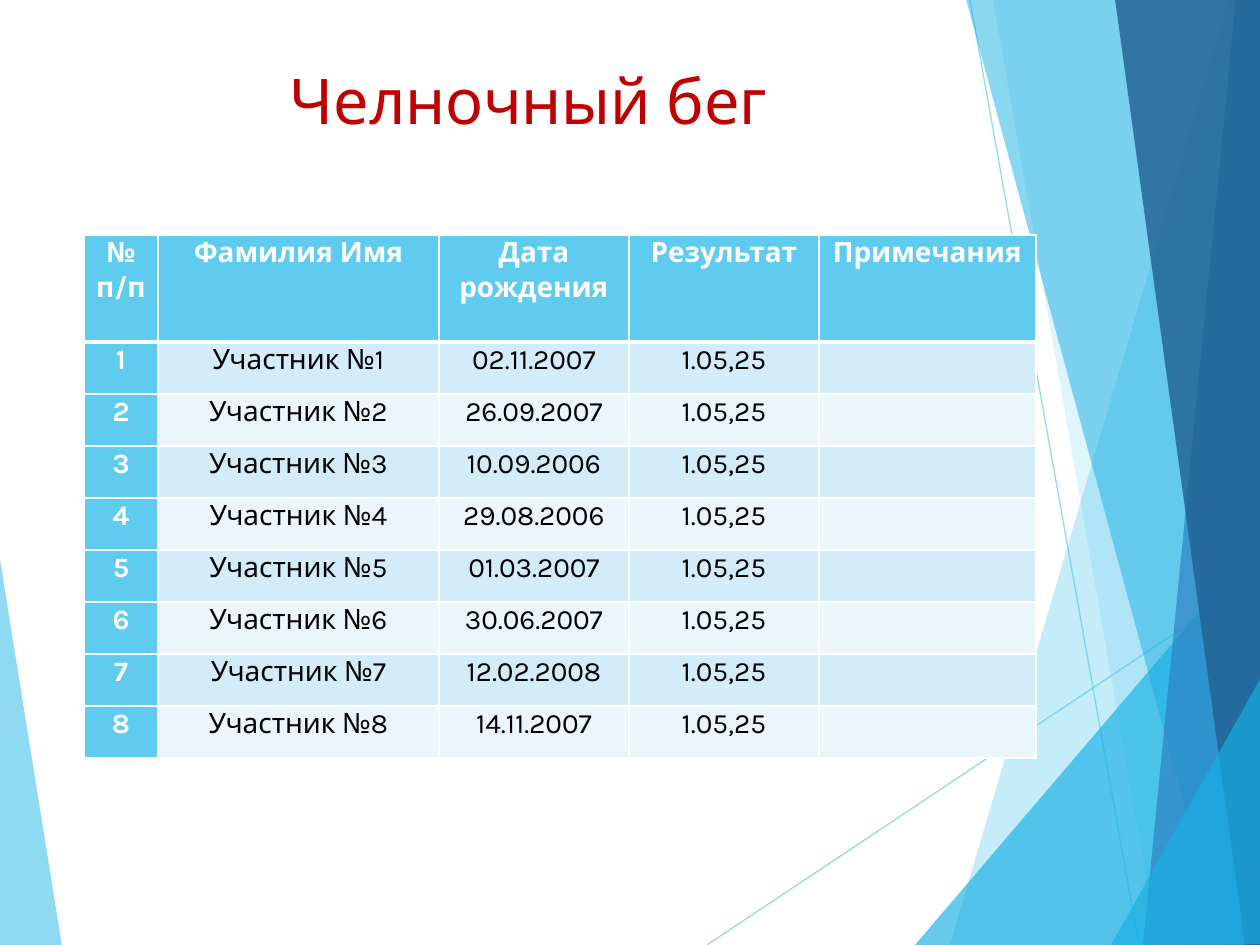
from lxml.etree import SubElement
from pptx import Presentation
from pptx.dml.color import RGBColor
from pptx.enum.shapes import MSO_CONNECTOR
from pptx.enum.text import MSO_ANCHOR, PP_ALIGN
from pptx.oxml.ns import qn
from pptx.util import Pt

PX = 7257  # EMU in one px, 126 px to the inch
FONT = "Karla"
SKY, CYAN, BLUE, NAVY = "5FCBEF", "17B0E4", "2E83C3", "226292"
WHITE, BLACK, RED = "FFFFFF", "000000", "C00000"
BANDS = ["D2ECF9", "EAF6FC"]


def paint(fill, color):
    fill.solid()
    fill.fore_color.rgb = RGBColor.from_string(color)


def write(frame, text, size=16, color=BLACK, bold=False, spacing=1.0, after=0):
    paragraph = frame.paragraphs[0]
    paragraph.alignment = PP_ALIGN.CENTER
    paragraph.line_spacing = spacing
    paragraph.space_after = Pt(after)
    run = paragraph.add_run()
    run.text = text
    run.font.name = FONT
    run.font.size = Pt(size)
    run.font.bold = bold
    paint(run.font.fill, color)


presentation = Presentation()
presentation.slide_width = 1260 * PX
presentation.slide_height = 945 * PX
slide = presentation.slides.add_slide(presentation.slide_layouts[6])

# Background facets, back to front: points, colour, opacity in percent.
# Two points make a thin line.
facets = [
    ([(-1, 553), (62, 946), (-1, 945)], SKY, 70),
    ([(707, 945), (1261, 576)], SKY, 70),
    ([(970, 0), (1139, 945)], SKY, 70),
    ([(1229, 0), (950, 945), (1263, 946), (1261, 1)], SKY, 36),
    ([(993, -1), (1158, 945), (1261, 945), (1261, -1)], SKY, 20),
    ([(915, 945), (1260, 541), (1261, 945)], CYAN, 66),
    ([(966, -1), (1222, 945), (1261, 944), (1261, -1)], CYAN, 50),
    ([(1236, -1), (1143, 945), (1261, 945), (1260, -1)], BLUE, 70),
    ([(1115, -1), (1245, 945), (1263, 945), (1260, -1)], NAVY, 82),
    ([(1111, 945), (1263, 674), (1263, 944)], CYAN, 66),
]
for points, color, opacity in facets:
    if len(points) == 2:
        ends = [value * PX for point in points for value in point]
        shape = slide.shapes.add_connector(MSO_CONNECTOR.STRAIGHT, *ends)
        shape.line.width = Pt(0.75)
        paint(shape.line.fill, color)
        SubElement(shape.element.spPr, qn("a:effectLst"))
    else:
        builder = slide.shapes.build_freeform(*points[0], scale=PX)
        builder.add_line_segments(points[1:], close=True)
        shape = builder.convert_to_shape()
        shape.shadow.inherit = False
        shape.line.fill.background()
        paint(shape.fill, color)
    for tint in shape.element.spPr.iter(qn("a:srgbClr")):
        SubElement(tint, qn("a:alpha"), val=str(opacity * 1000))

# Title
title = slide.shapes.add_textbox(84 * PX, 55 * PX, 874 * PX, 210 * PX)
title.text_frame.word_wrap = True
title.text_frame.vertical_anchor = MSO_ANCHOR.TOP
write(title.text_frame, " Челночный бег", size=36, color=RED)

# Results table
header = ["№ п/п", "Фамилия Имя", "Дата рождения", "Результат", "Примечания"]
birth_dates = ["02.11.2007", "26.09.2007", "10.09.2006", "29.08.2006",
               "01.03.2007", "30.06.2007", "12.02.2008", "14.11.2007"]
rows = [header] + [
    [str(number), f"Участник №{number}", date, "1.05,25", ""]
    for number, date in enumerate(birth_dates, 1)
]
column_widths = [74, 281, 190, 190, 217]
row_heights = [107] + [52] * len(birth_dates)
table = slide.shapes.add_table(
    len(rows), len(header), 84 * PX, 235 * PX,
    sum(column_widths) * PX, sum(row_heights) * PX).table
for column, width in zip(table.columns, column_widths):
    column.width = width * PX
for row, height in zip(table.rows, row_heights):
    row.height = height * PX

for row_index, row in enumerate(rows):
    for column_index, text in enumerate(row):
        cell = table.cell(row_index, column_index)
        cell.margin_left = cell.margin_right = 9 * PX
        cell.margin_top = cell.margin_bottom = 0

        # White borders, thicker under the header
        properties = cell._tc.get_or_add_tcPr()
        for side in "LRTB":
            thick = (row_index, side) in [(0, "B"), (1, "T")]
            border = SubElement(properties, qn(f"a:ln{side}"),
                                w=str(Pt(3 if thick else 1)))
            border_fill = SubElement(border, qn("a:solidFill"))
            SubElement(border_fill, qn("a:srgbClr"), val=WHITE)

        heading = row_index == 0 or column_index == 0
        paint(cell.fill, SKY if heading else BANDS[(row_index - 1) % 2])
        if text:
            write(cell.text_frame, text, color=WHITE if heading else BLACK,
                  bold=heading, spacing=1.07, after=8)

presentation.save("out.pptx")
